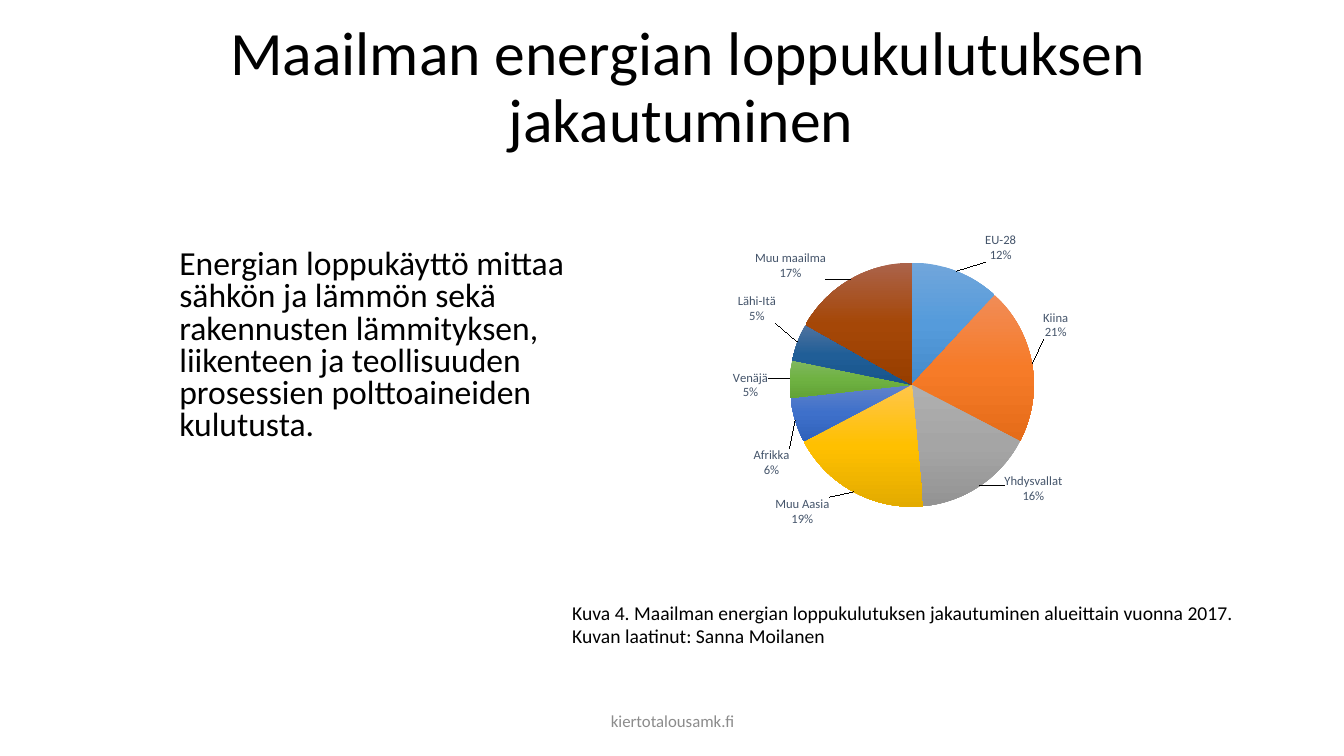
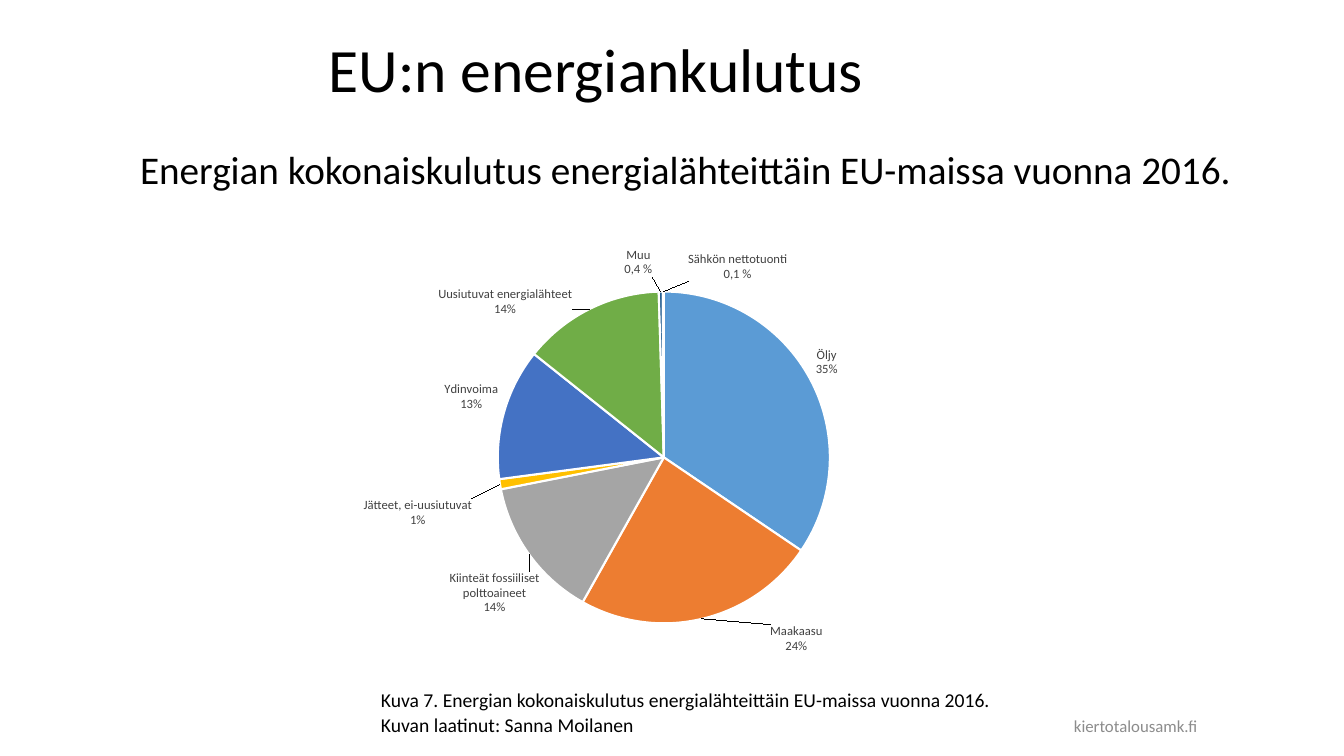
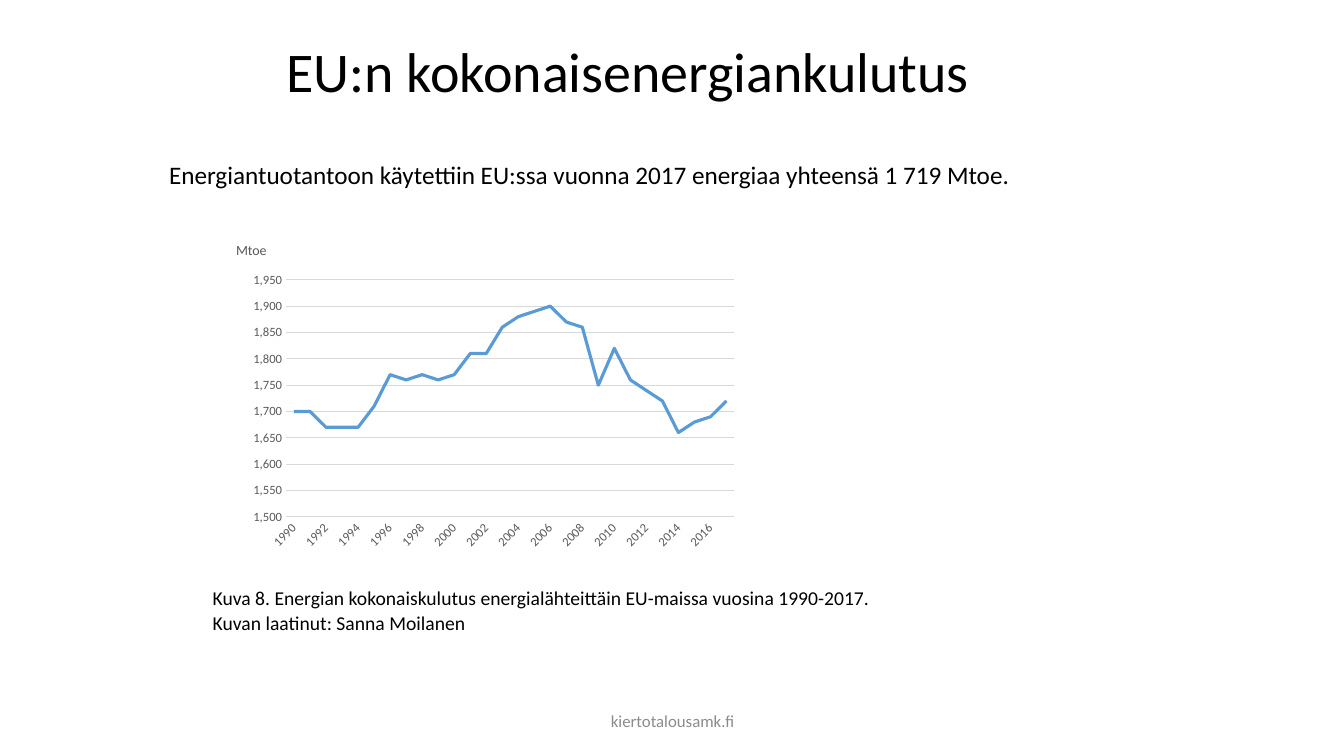
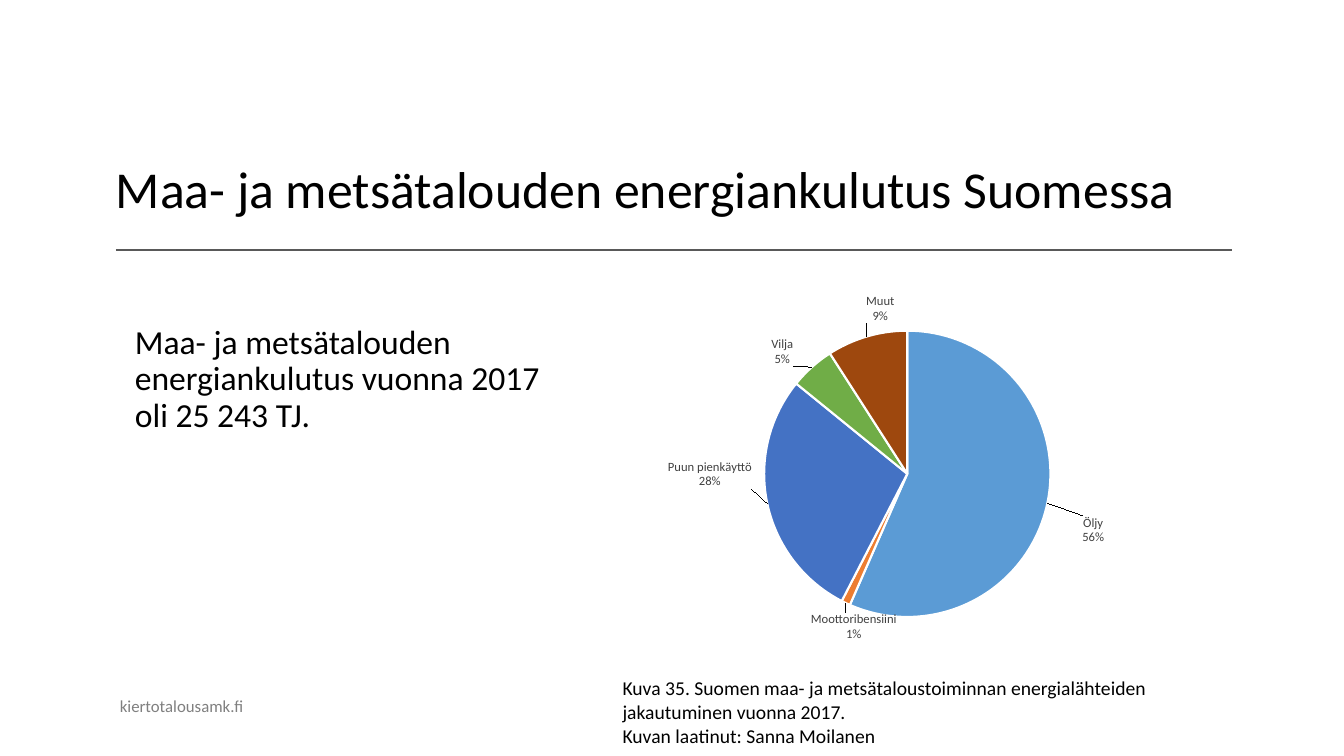
from copy import deepcopy

from lxml.etree import SubElement
from pptx import Presentation
from pptx.chart.data import CategoryChartData
from pptx.dml.color import RGBColor
from pptx.enum.chart import XL_CHART_TYPE as ChartType
from pptx.enum.chart import XL_LABEL_POSITION as LabelPosition
from pptx.enum.chart import XL_TICK_MARK as TickMark
from pptx.enum.shapes import MSO_CONNECTOR as Connector
from pptx.enum.text import MSO_ANCHOR as Anchor
from pptx.enum.text import PP_ALIGN as Align
from pptx.oxml import parse_xml
from pptx.oxml.ns import nsdecls, qn
from pptx.util import Cm, Pt

FONT = "Calibri"
BLACK, WHITE = "000000", "FFFFFF"
FOOTER_GREY, DARK_FOOTER = "8C8C8C", "808080"
AXIS_GREY, GRID_GREY = "595959", "D9D9D9"
LABEL_GREY, LABEL_BLUE = "404040", "44546A"
BLUE = "5B9BD5"
SLICES = [BLUE, "ED7D31", "A5A5A5", "FFC000",
          "4472C4", "70AD47", "255E91", "9E480E"]
# Top, middle and bottom colour of each shaded slice
SHADED_SLICES = [
    ("71A6DB", "559BDB", "448ACA"), ("F18C57", "F67B28", "E56C19"),
    ("AFAFAF", "A5A5A5", "939393"), ("FFC64B", "FFC000", "E3AB00"),
    ("6183CB", "3E70CA", "3062BB"), ("81B861", "6FB242", "62A336"),
    ("51739F", "205E97", "17548B"), ("AB634B", "A54707", "983E00"),
]
AUTHOR = "Kuvan laatinut: Sanna Moilanen"


def color(value):
    return RGBColor.from_string(value)


def style_font(font, size, tone):
    font.name, font.size, font.bold = FONT, Pt(size), False
    font.color.rgb = color(tone)


# Text
def add_text(page, area, lines, size, tone=BLACK, align=Align.LEFT,
             anchor=Anchor.TOP, spacing=1.0, gap=0):
    box = page.shapes.add_textbox(*map(Cm, area))
    frame = box.text_frame
    frame.word_wrap = True
    frame.vertical_anchor = anchor
    for index, line in enumerate(lines):
        para = frame.paragraphs[0] if index == 0 else frame.add_paragraph()
        para.alignment = align
        para.line_spacing = spacing
        para.space_before = Pt(gap if index else 0)
        span = para.add_run()
        span.text = line
        style_font(span.font, size, tone)


def add_title(page, area, text, size=44, align=Align.LEFT, anchor=Anchor.MIDDLE):
    add_text(page, area, [text], size, align=align, anchor=anchor, spacing=0.9)


def add_footer(page, left=11.95, top=17.65, tone=FOOTER_GREY, align=Align.CENTER):
    add_text(page, (left, top, 10, 1.02), ["kiertotalousamk.fi"], 12, tone,
             align, Anchor.MIDDLE)


def add_caption(page, left, top, width, text, gap=0):
    add_text(page, (left, top, width, 1.6), [text, AUTHOR], 14, gap=gap)


# Charts
def make_layout(inner=False, **values):
    layout = parse_xml(f"<c:layout {nsdecls('c')}><c:manualLayout/></c:layout>")
    manual = layout[0]
    if inner:
        SubElement(manual, qn("c:layoutTarget")).set("val", "inner")
    if inner or "mode" in values:
        for mode in ("xMode", "yMode"):
            SubElement(manual, qn(f"c:{mode}")).set("val", "edge")
    for key in ("x", "y", "w", "h"):
        if key in values:
            SubElement(manual, qn(f"c:{key}")).set("val", str(values[key]))
    return layout


def add_chart(page, kind, area, plot_area, categories, values):
    data = CategoryChartData()
    data.categories = categories
    data.add_series("Series 1", values)
    chart = page.shapes.add_chart(kind, *map(Cm, area), data).chart
    chart.has_title = chart.has_legend = False
    style_font(chart.font, 10, BLACK)
    element = chart._chartSpace.find(".//" + qn("c:plotArea"))
    for old in element.findall(qn("c:layout")):
        element.remove(old)
    element.insert(0, make_layout(True, **dict(zip("xywh", plot_area))))
    return chart


def split_label_lines(labels):
    separator = parse_xml(f"<c:separator {nsdecls('c')}>\n</c:separator>")
    labels.find(qn("c:showBubbleSize")).addnext(separator)


def shade_slice(series, point, tones):
    fill = point.format.fill
    fill.gradient()
    fill.gradient_angle = 270
    stops = series._element.xpath("./c:dPt/c:spPr/a:gradFill/a:gsLst")[-1]
    stops.append(deepcopy(stops[-1]))
    for stop, tone, position in zip(fill.gradient_stops, tones, (0, 0.5, 1)):
        stop.color.rgb = color(tone)
        stop.position = position


def style_label(point, offset, text, tone):
    label = point.data_label
    if text:
        label.text_frame.text = text
        for para in label.text_frame.paragraphs:
            for span in para.runs:
                style_font(span.font, 9, tone)
    else:
        style_font(label.font, 9, tone)
    label.position = LabelPosition.OUTSIDE_END
    element = label._get_or_add_dLbl()
    for name, shown in (("Val", 0), ("CatName", 1), ("Percent", 1)):
        element.find(qn(f"c:show{name}")).set("val", str(shown))
    split_label_lines(element)
    for old in element.findall(qn("c:layout")):
        element.remove(old)
    element[0].addnext(make_layout(x=offset[0], y=offset[1]))


def hide_label(point):
    element = point.data_label._get_or_add_dLbl()
    for child in list(element)[1:]:
        element.remove(child)
    SubElement(element, qn("c:delete")).set("val", "1")


def add_pie(page, area, plot_area, slices, shares=None, tone=LABEL_GREY,
            shaded=False):
    """Slices are (name, value, label offset); no offset means no label."""
    names, values, offsets = zip(*slices)
    chart = add_chart(page, ChartType.PIE, area, plot_area, names, values)
    chart.plots[0].vary_by_categories = True
    series = chart.plots[0].series[0]
    labels = series.data_labels
    labels.show_value = False
    labels.show_category_name = labels.show_percentage = True
    labels.position = LabelPosition.OUTSIDE_END
    style_font(labels.font, 9, tone)
    split_label_lines(labels._element)
    for index, (name, offset) in enumerate(zip(names, offsets)):
        point = series.points[index]
        if shaded:
            shade_slice(series, point, SHADED_SLICES[index])
            point.format.line.fill.background()
        else:
            point.format.fill.solid()
            point.format.fill.fore_color.rgb = color(SLICES[index])
            point.format.line.color.rgb = color(WHITE)
            point.format.line.width = Pt(1.5)
        share = (shares or {}).get(name)
        if offset is None:
            hide_label(point)
        else:
            style_label(point, offset, f"{name}\n{share}" if share else None, tone)


def add_line_chart(page, area, plot_area, categories, values):
    chart = add_chart(page, ChartType.LINE, area, plot_area, categories, values)
    chart.plots[0].vary_by_categories = False
    series = chart.plots[0].series[0]
    series.smooth = False
    series.format.line.color.rgb = color(BLUE)
    series.format.line.width = Pt(2.25)
    years, amounts = chart.category_axis, chart.value_axis
    for axis in (years, amounts):
        axis.major_tick_mark = axis.minor_tick_mark = TickMark.NONE
        style_font(axis.tick_labels.font, 9, AXIS_GREY)
    amounts.minimum_scale, amounts.maximum_scale = 1500, 1950
    amounts.major_unit = 50
    amounts.tick_labels.number_format = "#,##0"
    amounts.tick_labels.number_format_is_linked = False
    amounts.format.line.fill.background()
    amounts.has_major_gridlines = True
    for line in (years.format.line, amounts.major_gridlines.format.line):
        line.color.rgb = color(GRID_GREY)
        line.width = Pt(0.75)
    # Slanted years, and the unit above the value axis
    years._element.find(qn("c:txPr")).find(qn("a:bodyPr")).set("rot", "-2700000")
    span = years.axis_title.text_frame.paragraphs[0].add_run()
    span.text = "Mtoe"
    style_font(span.font, 10, AXIS_GREY)
    title = years.axis_title._element
    for old in title.findall(qn("c:layout")):
        title.remove(old)
    title.find(qn("c:tx")).addnext(make_layout(mode="edge", x=0.01, y=0.02))


# Slides
def add_world_slide(page):
    add_title(page, (1.57, 0.41, 31.55, 3.68),
              "Maailman energian loppukulutuksen jakautuminen ", align=Align.CENTER)
    add_text(page, (4.27, 6.17, 11.43, 5.46),
             ["Energian loppukäyttö mittaa sähkön ja lämmön sekä rakennusten "
              "lämmityksen, liikenteen ja teollisuuden prosessien "
              "polttoaineiden kulutusta."], 24, spacing=0.8)
    add_footer(page)
    add_pie(page, (16.1, 5.54, 13.49, 8.31), (0.28, 0.13, 0.46, 0.74), [
        ("EU-28", 12, (0.05, -0.01)),
        ("Kiina", 21, (0.01, -0.07)),
        ("Yhdysvallat", 16, (0.04, -0.05)),
        ("Muu Aasia", 19, (-0.04, 0)),
        ("Afrikka", 6, (0, 0.08)),
        ("Venäjä", 5, (-0.03, 0.02)),
        ("Lähi-Itä", 5, (-0.03, -0.05)),
        ("Muu maailma", 17, (-0.04, 0.02)),
    ], tone=LABEL_BLUE, shaded=True)
    add_caption(page, 14.17, 15.01, 18.5,
                "Kuva 4. Maailman energian loppukulutuksen jakautuminen "
                "alueittain vuonna 2017.")


def add_sources_slide(page):
    add_title(page, (8.03, 0, 24, 3.68), "EU:n energiankulutus")
    add_text(page, (3.28, 3.68, 29.34, 1.6),
             ["Energian kokonaiskulutus energialähteittäin EU-maissa vuonna 2016."],
             28, spacing=0.9)
    add_footer(page, left=23.62, top=17.78)
    add_pie(page, (7.37, 5.61, 18.72, 10.87), (0.27, 0.16, 0.46, 0.77), [
        ("Öljy", 35, (0, 0)),
        ("Maakaasu", 24, (0.09, 0)),
        ("Kiinteät fossiiliset polttoaineet", 14, (0.02, 0.03)),
        ("Jätteet, ei-uusiutuvat", 1, (-0.03, 0.03)),
        ("Ydinvoima", 13, (0, 0)),
        ("Uusiutuvat energialähteet", 14, (-0.02, 0.03)),
        ("Muu", 0.4, (-0.03, -0.02)),
        ("Sähkön nettotuonti", 0.1, (0.1, -0.01)),
    ], shares={"Öljy": "35%", "Muu": "0,4 %", "Sähkön nettotuonti": "0,1 %"})
    add_caption(page, 9.35, 17.22, 18.5,
                "Kuva 7. Energian kokonaiskulutus energialähteittäin "
                "EU-maissa vuonna 2016.", gap=1)


def add_trend_slide(page):
    add_title(page, (1.12, 0.03, 29.41, 3.68), "EU:n kokonaisenergiankulutus",
              size=40, align=Align.CENTER)
    add_footer(page)
    add_text(page, (4.01, 3.89, 22.56, 1.02),
             ["Energiantuotantoon käytettiin EU:ssa vuonna 2017 energiaa "
              "yhteensä 1 719 Mtoe."], 18)
    years = [str(year) for year in range(1990, 2017)] + ["2017*"]
    add_line_chart(page, (5.74, 5.84, 14.68, 8.66), (0.1, 0.14, 0.77, 0.69), years, [
        1700, 1700, 1670, 1670, 1670, 1710, 1770, 1760, 1770, 1760,
        1770, 1810, 1810, 1860, 1880, 1890, 1900, 1870, 1860, 1750,
        1820, 1760, 1740, 1720, 1660, 1680, 1690, 1720])
    add_caption(page, 5.11, 14.63, 23.62,
                "Kuva 8. Energian kokonaiskulutus energialähteittäin "
                "EU-maissa vuosina 1990-2017.", gap=1)


def add_farming_slide(page):
    add_title(page, (2.67, 2.72, 29.41, 2.95),
              "Maa- ja metsätalouden energiankulutus Suomessa", size=37,
              anchor=Anchor.BOTTOM)
    rule = page.shapes.add_connector(Connector.STRAIGHT, Cm(2.92), Cm(6.3),
                                     Cm(31.04), Cm(6.3))
    rule.line.color.rgb = color(AXIS_GREY)
    rule.line.width = Pt(1.25)
    SubElement(rule._element.spPr, qn("a:effectLst"))
    add_text(page, (3.15, 8.08, 11.43, 3.5),
             ["Maa- ja metsätalouden energiankulutus vuonna 2017 oli 25 243 TJ."],
             24, spacing=0.9)
    add_footer(page, left=2.77, top=17.27, tone=DARK_FOOTER, align=Align.LEFT)
    add_pie(page, (15.95, 7.21, 12.24, 9.37), (0.27, 0.12, 0.59, 0.77), [
        ("Öljy", 56, (0.06, 0.03)),
        ("Moottoribensiini", 1, (0.11, 0.01)),
        ("Moottoripetroli", 0, None),
        ("Maakaasu", 0, (-0.08, 0.01)),
        ("Puun pienkäyttö", 28, (-0.02, -0.12)),
        ("Vilja", 5, (-0.03, 0.01)),
        ("Kivihiili", 0, (0.02, -0.05)),
        ("Muut", 9, (0.06, -0.02)),
    ], shares={"Öljy": "56%"})
    add_caption(page, 15.44, 16.92, 14.61,
                "Kuva 35. Suomen maa- ja metsätaloustoiminnan energialähteiden "
                "jakautuminen vuonna 2017.")


def main():
    deck = Presentation()
    deck.slide_width, deck.slide_height = Cm(33.87), Cm(19.05)
    for build in (add_world_slide, add_sources_slide,
                  add_trend_slide, add_farming_slide):
        build(deck.slides.add_slide(deck.slide_layouts[6]))
    deck.save("out.pptx")


if __name__ == "__main__":
    main()
